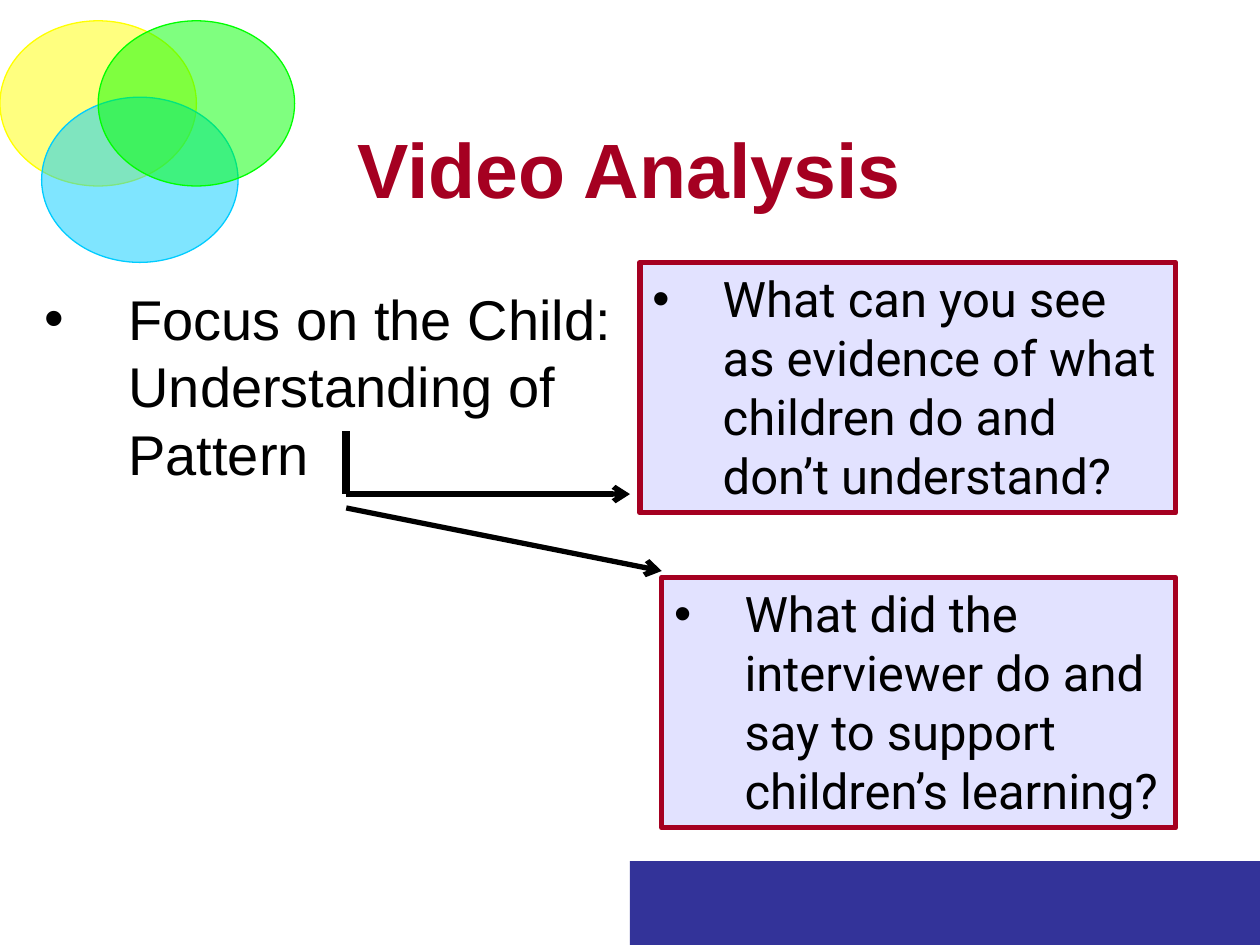
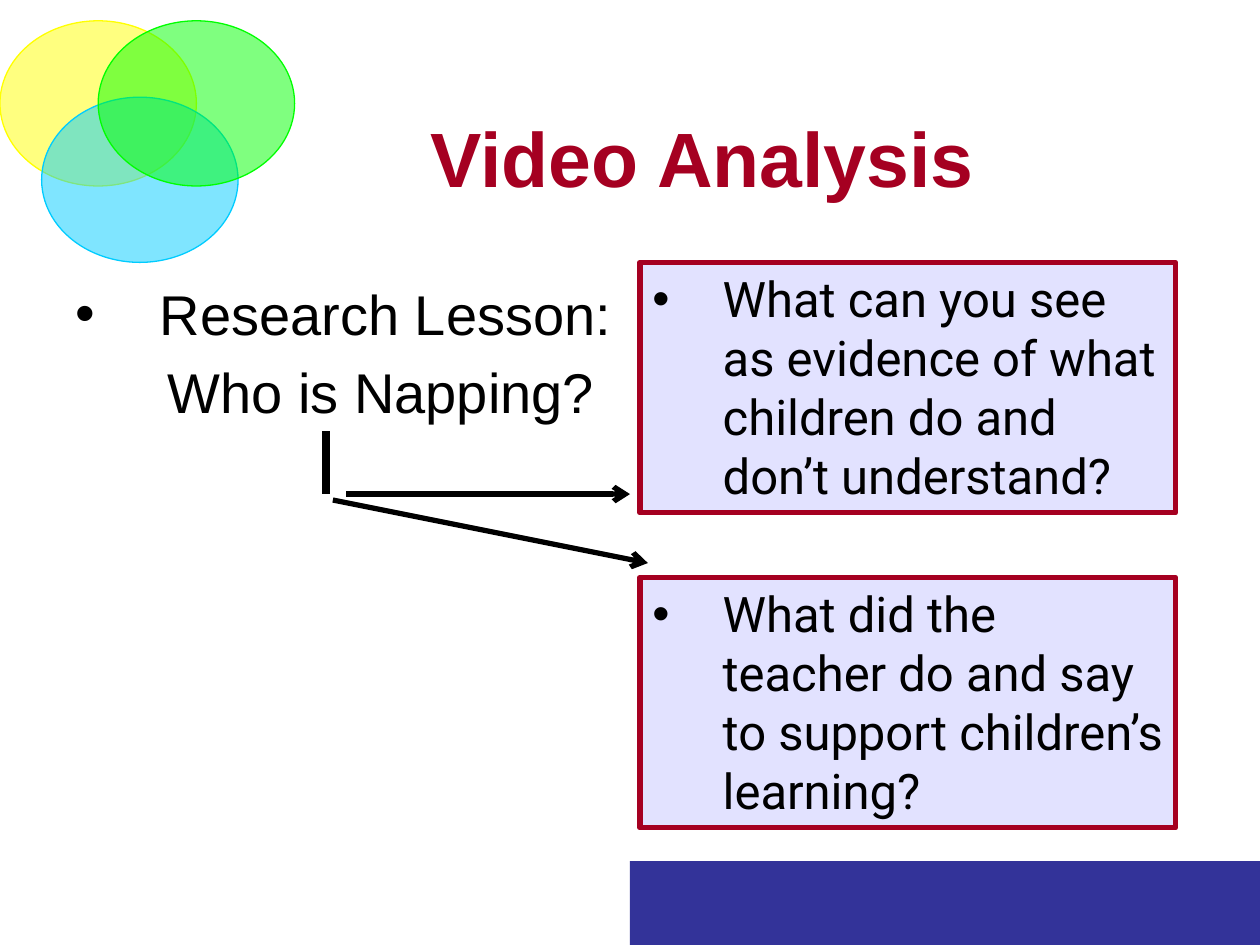
"""Build two video analysis slides, each leading from a lesson to two questions."""
from lxml import etree
from pptx import Presentation
from pptx.dml.color import RGBColor
from pptx.enum.shapes import MSO_CONNECTOR, MSO_SHAPE
from pptx.enum.text import MSO_ANCHOR, MSO_AUTO_SIZE, PP_ALIGN
from pptx.oxml.ns import qn
from pptx.util import Cm, Pt

RECTANGLE, OVAL = MSO_SHAPE.RECTANGLE, MSO_SHAPE.OVAL
STRAIGHT = MSO_CONNECTOR.STRAIGHT
LEFT, TOP, NO_FIT = PP_ALIGN.LEFT, MSO_ANCHOR.TOP, MSO_AUTO_SIZE.NONE
BLACK = RGBColor(0x00, 0x00, 0x00)
CRIMSON = RGBColor(0xA5, 0x00, 0x21)
LAVENDER = RGBColor(0xE2, 0xE2, 0xFF)
NAVY = RGBColor(0x33, 0x33, 0x99)
YELLOW = RGBColor(0xFF, 0xFF, 0x00)
SKY = RGBColor(0x00, 0xCC, 0xFF)
GREEN = RGBColor(0x00, 0xFF, 0x00)
QUESTION_RIGHT = 23.7


def write(box, text, font="Arial", size=32, color=BLACK, bold=False,
          indent=0, bullet=False, before=0, margin_left=0.25, margin_top=0.13):
    """Write text as the first paragraph, or as the next one if text is there."""
    frame = box.text_frame
    para = frame.add_paragraph() if frame.text else frame.paragraphs[0]
    frame.word_wrap, frame.auto_size, frame.vertical_anchor = True, NO_FIT, TOP
    frame.margin_left, frame.margin_top = Cm(margin_left), Cm(margin_top)
    properties = para._p.get_or_add_pPr()
    properties.set("marL", str(Cm(indent)))
    properties.set("indent", str(Cm(-indent if bullet else 0)))
    para.alignment, para.space_before = LEFT, Pt(before)
    if bullet:
        etree.SubElement(properties, qn("a:buFont")).set("typeface", "Arial")
        etree.SubElement(properties, qn("a:buChar")).set("char", "•")
    else:
        etree.SubElement(properties, qn("a:buNone"))
    span = para.add_run()
    span.text = text
    span.font.name, span.font.size, span.font.bold = font, Pt(size), bold
    span.font.color.rgb = color


def add_filled(page, kind, place, fill, line=None, width=0.75):
    """Add a flat preset shape at a place given in centimetres."""
    shape = page.shapes.add_shape(kind, *map(Cm, place))
    shape.shadow.inherit = False
    shape.fill.solid()
    shape.fill.fore_color.rgb = fill
    if line is None:
        shape.line.fill.background()
    else:
        shape.line.color.rgb, shape.line.width = line, Pt(width)
    return shape


deck = Presentation()
deck.slide_width, deck.slide_height = Cm(25.4), Cm(19.05)
layout = deck.slide_layouts[1]

lessons = [
    {"title": (6.56, 2.12, 15.04, 3.18),
     "body": (0.64, 5.51, 12.06, 5.08),
     "topic": ["Focus on the Child: Understanding of Pattern"],
     "helper": "What did the interviewer do and say to support children’s learning?",
     "helper_left": 13.34,
     "stem": 6.98,
     "slant": (6.98, 10.24, 13.34, 11.51)},
    {"title": (8.04, 1.9, 12.5, 3.18),
     "body": (1.27, 5.4, 11.43, 3.38),
     "topic": ["Research Lesson:", "Who is Napping?"],
     "helper": "What did the teacher do and say to support children’s learning?",
     "helper_left": 12.9,
     "stem": 6.58,
     "slant": (6.71, 10.08, 13.06, 11.35)},
]

for lesson in lessons:
    page = deck.slides.add_slide(layout)
    title, body = page.placeholders
    for box, place in ((title, lesson["title"]), (body, lesson["body"])):
        box.left, box.top, box.width, box.height = map(Cm, place)
    write(title, "Video Analysis", size=44, bold=True, color=CRIMSON,
          margin_left=0.64, margin_top=0.33)
    for number, line in enumerate(lesson["topic"]):
        write(body, line, bullet=number == 0, indent=1.86 if number else 1.7,
              before=6.4 if number else 0, margin_top=0.23)

    questions = [
        (12.9, 5.29, "What can you see as evidence of what children do and don’t understand?"),
        (lesson["helper_left"], 11.64, lesson["helper"]),
    ]
    for left, top, question in questions:
        box = add_filled(page, RECTANGLE, (left, top, QUESTION_RIGHT - left, 5.05),
                         LAVENDER, CRIMSON, 3)
        write(box, question, font="Roboto", size=28, indent=1.42, bullet=True)

    stem = lesson["stem"]
    links = [
        ((stem, 8.69, stem, 9.96), 4.5, False),
        ((6.98, 9.96, 12.7, 9.96), 3, True),
        (lesson["slant"], 3, True),
    ]
    for ends, width, arrow in links:
        link = page.shapes.add_connector(STRAIGHT, *map(Cm, ends))
        link.line.color.rgb, link.line.width = BLACK, Pt(width)
        if arrow:
            etree.SubElement(link.line._get_or_add_ln(), qn("a:tailEnd")).set("type", "arrow")
        etree.SubElement(link._element.spPr, qn("a:effectLst"))

page = deck.slides[0]
backdrop = [add_filled(page, RECTANGLE, (12.7, 17.36, 12.7, 1.69), NAVY)]
for left, top, color in ((0, 0.42, YELLOW), (0.84, 1.96, SKY), (1.98, 0.42, GREEN)):
    circle = add_filled(page, OVAL, (left, top, 3.96, 3.33), color, color)
    tint = circle._element.spPr.find(qn("a:solidFill"))[0]
    etree.SubElement(tint, qn("a:alpha")).set("val", "50000")
    backdrop.append(circle)
for position, shape in enumerate(backdrop, start=2):
    layout.shapes.element.insert(position, shape.element)

deck.save("out.pptx")
